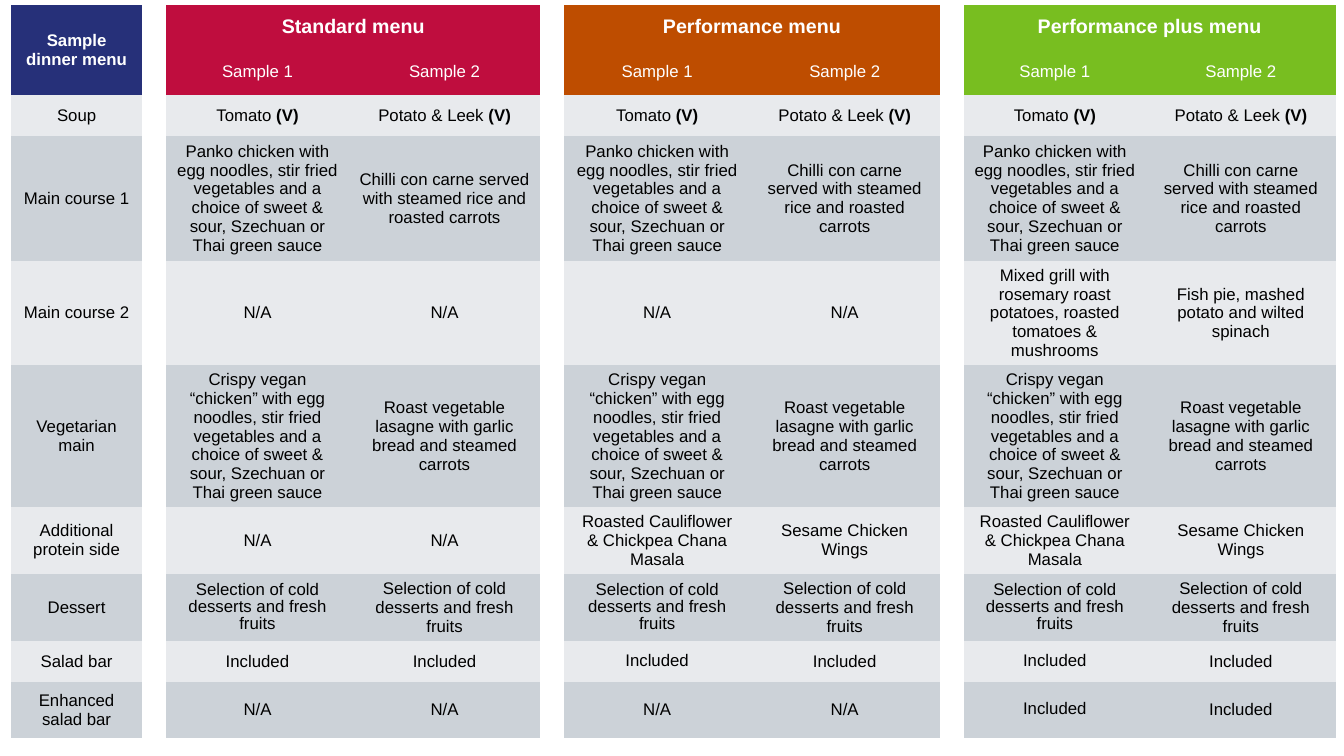
from dataclasses import dataclass

from pptx import Presentation, util as u
from pptx.dml.color import RGBColor
from pptx.enum import text as t
from pptx.table import Table, _Cell

NAVY = RGBColor(0x26, 0x30, 0x79)
RED = RGBColor(0xBF, 0x0D, 0x3E)
RUST = RGBColor(0xBE, 0x4D, 0x00)
GREEN = RGBColor(0x78, 0xBE, 0x20)
PALE = RGBColor(0xE8, 0xEA, 0xED)
GREY = RGBColor(0xCC, 0xD2, 0xD8)
WHITE = RGBColor(0xFF, 0xFF, 0xFF)
BLACK = RGBColor(0, 0, 0)

NO_GRID = "{2D5ABB26-0587-4C30-8999-92F81FD0307C}"
VEG = "(V)"
GAP = 0.23
LEFT, TOP = 0.11, 0.05
LABEL_W = 1.3
HEAD_ROWS = (0.42, 0.47)


@dataclass(frozen=True)
class Menu:
    name: str
    color: RGBColor
    widths: tuple[float, float]


@dataclass(frozen=True)
class Course:
    label: str
    height: float
    pairs: tuple[tuple[str, str], ...]
    tight: tuple[int, ...] = ()  # menus whose first sample has closer lines


MENUS = (
    Menu("Standard menu", RED, (1.81, 1.9)),
    Menu("Performance menu", RUST, (1.84, 1.88)),
    Menu("Performance plus menu", GREEN, (1.81, 1.88)),
)

SAUCE = ("noodles, stir fried vegetables and a choice of "
         "sweet & sour, Szechuan or Thai green sauce")
CHILLI = "Chilli con carne served with steamed rice and roasted carrots"
LASAGNE = "Roast vegetable lasagne with garlic bread and steamed carrots"
FRUIT = "Selection of cold desserts and fresh fruits"
GRILL = "Mixed grill with rosemary roast potatoes, roasted tomatoes & mushrooms"
PIE = "Fish pie, mashed potato and wilted spinach"
NONE = ("N/A", "N/A")
WITH = ("Included", "Included")
SIDE = ("Roasted Cauliflower & Chickpea Chana Masala", "Sesame Chicken Wings")

COURSES = (
    Course("Soup", 0.4, (("Tomato (V)", "Potato & Leek (V)"),) * 3),
    Course("Main course 1", 1.24,
           ((f"Panko chicken with egg {SAUCE}", CHILLI),) * 3),
    Course("Main course 2", 1.03, (NONE, NONE, (GRILL, PIE))),
    Course("Vegetarian main", 1.41,
           ((f"Crispy vegan “chicken” with egg {SAUCE}", LASAGNE),) * 3),
    Course("Additional protein side", 0.66, (NONE, SIDE, SIDE)),
    Course("Dessert", 0.67, ((FRUIT, FRUIT),) * 3, (0, 1, 2)),
    Course("Salad bar", 0.4, (WITH,) * 3, (1, 2)),
    Course("Enhanced salad bar", 0.55, (NONE, NONE, WITH), (2,)),
)


def write(cell: _Cell, words: str, fill: RGBColor, color: RGBColor = BLACK,
          size: int = 12, bold: bool = False, lines: float | None = None) -> None:
    """Fill a cell and centre its words, with the (V) mark in bold."""
    cell.fill.solid()
    cell.fill.fore_color.rgb = fill
    cell.vertical_anchor = t.MSO_ANCHOR.MIDDLE
    para = cell.text_frame.paragraphs[0]
    para.alignment = t.PP_ALIGN.CENTER
    if lines:
        para.line_spacing = lines
    body, mark, _ = words.partition(VEG)
    for part, heavy in ((body, bold), (mark, True)):
        if part:
            run = para.add_run()
            run.text = part
            look = {"name": "Arial", "size": u.Pt(size), "bold": heavy}
            for key, value in look.items():
                setattr(run.font, key, value)
            run.font.color.rgb = color


def add_grid(slide) -> Table:
    """Add the unstyled table, with a narrow gap before each menu."""
    cols = [LABEL_W]
    for menu in MENUS:
        cols += [GAP, *menu.widths]
    rows = [*HEAD_ROWS, *(course.height for course in COURSES)]
    frame = slide.shapes.add_table(
        len(rows), len(cols), u.Inches(LEFT), u.Inches(TOP),
        u.Inches(sum(cols)), u.Inches(sum(rows)))
    grid = frame.table
    grid.first_row = grid.horz_banding = False
    grid._tbl.tblPr[0].text = NO_GRID
    for col, width in zip(grid.columns, cols):
        col.width = u.Inches(width)
    for row, height in zip(grid.rows, rows):
        row.height = u.Inches(height)
    return grid


def fill_heads(grid: Table) -> None:
    for col in (0, 1):
        grid.cell(0, col).merge(grid.cell(1, col))
    write(grid.cell(0, 0), "Sample dinner menu", NAVY, WHITE, bold=True)
    for n, menu in enumerate(MENUS):
        col = 2 + 3 * n
        grid.cell(0, col).merge(grid.cell(0, col + 1))
        write(grid.cell(0, col), menu.name, menu.color, WHITE, 14, True)
        for k in (0, 1):
            write(grid.cell(1, col + k), f"Sample {k + 1}", menu.color, WHITE)


def fill_courses(grid: Table) -> None:
    for i, course in enumerate(COURSES):
        row = i + len(HEAD_ROWS)
        band = GREY if i % 2 else PALE
        write(grid.cell(row, 0), course.label, band)
        for n, pair in enumerate(course.pairs):
            for k, dish in enumerate(pair):
                lines = 0.9 if k == 0 and n in course.tight else None
                write(grid.cell(row, 2 + 3 * n + k), dish, band, lines=lines)


def main() -> None:
    deck = Presentation()
    deck.slide_width, deck.slide_height = u.Inches(13.33), u.Inches(7.5)
    slide = deck.slides.add_slide(deck.slide_layouts[6])
    grid = add_grid(slide)
    fill_heads(grid)
    fill_courses(grid)
    deck.save("out.pptx")


if __name__ == "__main__":
    main()
